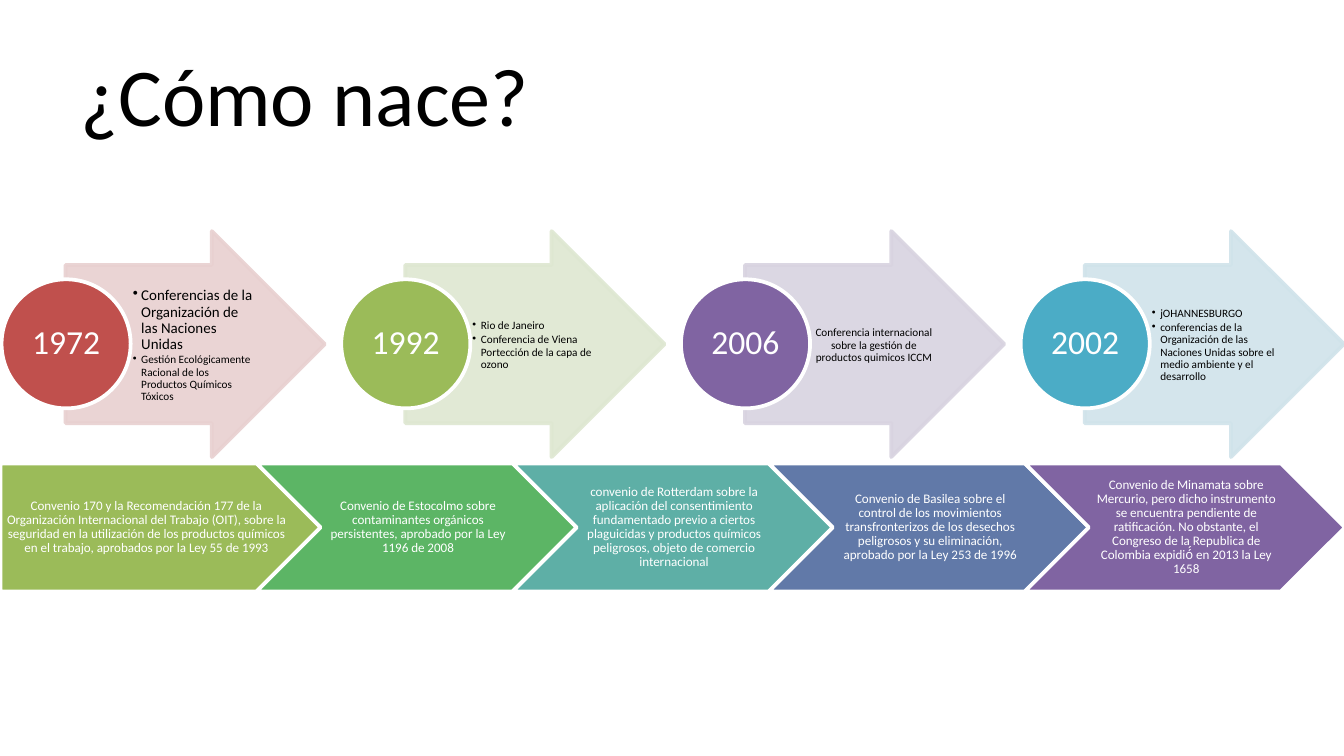
from pptx import Presentation
from pptx.dml.color import RGBColor
from pptx.enum.shapes import MSO_SHAPE
from pptx.enum.text import MSO_ANCHOR, PP_ALIGN
from pptx.oxml.ns import qn
from pptx.util import Cm, Pt
from lxml.etree import SubElement

BLACK = RGBColor(0x00, 0x00, 0x00)
WHITE = RGBColor(0xFF, 0xFF, 0xFF)
RED = RGBColor(0xC0, 0x50, 0x4D)
LIME = RGBColor(0x9B, 0xBB, 0x59)
GREEN = RGBColor(0x5C, 0xB5, 0x65)
TEAL = RGBColor(0x5E, 0xAF, 0xA6)
BLUE = RGBColor(0x61, 0x79, 0xA8)
PURPLE = RGBColor(0x80, 0x64, 0xA2)
AQUA = RGBColor(0x4B, 0xAC, 0xC6)
PINK = RGBColor(0xE8, 0xD0, 0xD0)
PALE_LIME = RGBColor(0xDE, 0xE7, 0xD1)
LILAC = RGBColor(0xD8, 0xD3, 0xE0)
PALE_AQUA = RGBColor(0xD0, 0xE3, 0xEA)

EVENTS = [
    ("1972", RED, PINK, True, [
        ("Conferencias de la Organización de las Naciones Unidas", 8),
        ("Gestión Ecológicamente Racional de los Productos Químicos Tóxicos", 6)]),
    ("1992", LIME, PALE_LIME, True, [
        ("Rio de Janeiro", 6),
        ("Conferencia de Viena Portección de la capa de ozono", 6)]),
    ("2006", PURPLE, LILAC, False, [
        ("Conferencia internacional sobre la gestión de productos quimicos ICCM", 6)]),
    ("2002", AQUA, PALE_AQUA, True, [
        ("jOHANNESBURGO", 6),
        ("conferencias de la Organización de las Naciones Unidas sobre el medio "
         "ambiente y el desarrollo", 6)]),
]

TREATIES = [
    (LIME, "Convenio 170 y la Recomendación 177 de la Organización Internacional del "
     "Trabajo (OIT), sobre la seguridad en la utilización de los productos químicos "
     "en el trabajo, aprobados por la Ley 55 de 1993"),
    (GREEN, "Convenio de Estocolmo sobre contaminantes orgánicos persistentes, "
     "aprobado por la Ley 1196 de 2008"),
    (TEAL, "convenio de Rotterdam sobre la aplicación del consentimiento fundamentado "
     "previo a ciertos plaguicidas y productos químicos peligrosos, objeto de "
     "comercio internacional"),
    (BLUE, "Convenio de Basilea sobre el control de los movimientos transfronterizos "
     "de los desechos peligrosos y su eliminación, aprobado por la Ley 253 de 1996"),
    (PURPLE, "Convenio de Minamata sobre Mercurio, pero dicho instrumento se encuentra "
     "pendiente de ratificación. No obstante, el Congreso de la Republica de "
     "Colombia expidió́ en 2013 la Ley 1658"),
]


def add_form(kind, left, top, width, height, fill, line):
    form = slide.shapes.add_shape(kind, Cm(left), Cm(top), Cm(width), Cm(height))
    form.shadow.inherit = False
    form.fill.solid()
    form.fill.fore_color.rgb = fill
    form.line.color.rgb = line
    form.line.width = Pt(2)
    return form


def write(form, lines, color, inset, align=PP_ALIGN.CENTER, bullet=False, space=0.9):
    frame = form.text_frame
    frame.word_wrap = True
    frame.vertical_anchor = MSO_ANCHOR.MIDDLE
    (frame.margin_left, frame.margin_top,
     frame.margin_right, frame.margin_bottom) = [Cm(v) for v in inset]
    for i, (text, size) in enumerate(lines):
        para = frame.add_paragraph() if i else frame.paragraphs[0]
        para.alignment = align
        para.line_spacing = space
        if bullet:
            props = para._p.get_or_add_pPr()
            props.set("marL", str(Cm(0.16)))
            props.set("indent", str(-Cm(0.16)))
            SubElement(props, qn("a:buChar")).set("char", "•")
            para.space_after = Pt(1)
        run = para.add_run()
        run.text = text
        run.font.name = "Calibri"
        run.font.size = Pt(size)
        run.font.color.rgb = color


deck = Presentation()
deck.slide_width = Cm(25.4)
deck.slide_height = Cm(14.29)
slide = deck.slides.add_slide(deck.slide_layouts[6])

title = slide.shapes.add_textbox(Cm(1.27), Cm(0.58), Cm(22.86), Cm(2.39))
write(title, [("¿Cómo nace?", 44)], BLACK, (0.25, 0.13, 0.25, 0.13),
      PP_ALIGN.LEFT, space=1.0)

for i, (year, dark, pale, bullet, lines) in enumerate(EVENTS):
    left = 0.03 + i * 6.42
    arrow = add_form(MSO_SHAPE.RIGHT_ARROW, left + 1.21, 4.37, 4.9, 4.27, pale, pale)
    arrow.adjustments[0] = 0.7
    arrow.adjustments[1] = 0.5
    for tint in arrow._element.spPr.iter(qn("a:srgbClr")):
        SubElement(tint, qn("a:alpha")).set("val", "90000")
    note = slide.shapes.add_textbox(Cm(left + 2.44), Cm(5.03), Cm(2.39), Cm(3))
    write(note, lines, BLACK, (0.04, 0.01, 0.02, 0.01),
          PP_ALIGN.LEFT if bullet else PP_ALIGN.CENTER, bullet)
    disc = add_form(MSO_SHAPE.OVAL, left, 5.28, 2.44, 2.44, dark, WHITE)
    write(disc, [(year, 18)], WHITE, (0.03, 0.03, 0.03, 0.03))

for i, (color, text) in enumerate(TREATIES):
    kind = MSO_SHAPE.CHEVRON if i else MSO_SHAPE.PENTAGON
    step = add_form(kind, 0.01 + i * 4.84, 8.76, 6.05, 2.42, color, WHITE)
    write(step, [(text, 7)], WHITE, (0.08 if i else 0.1, 0.05, 0.03, 0.05))

deck.save("out.pptx")
